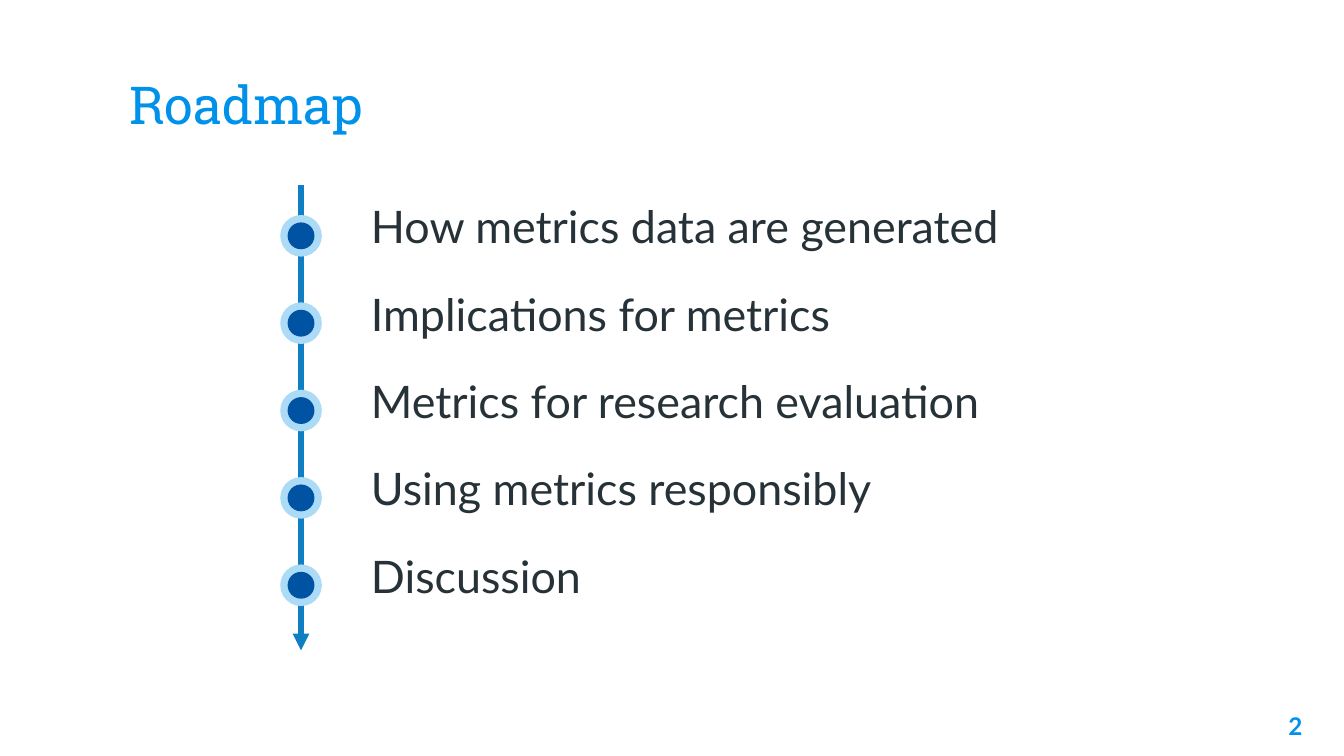
from lxml import etree
from pptx import Presentation
from pptx import util as u
from pptx.dml.color import RGBColor
from pptx.enum import shapes, text
from pptx.oxml import ns

PX = 4572
INK = {"sky": "0091EA", "dark": "263238", "line": "107EC2", "ring": "ACDBF8", "dot": "0053A3"}
STEPS = [
    "How metrics data are generated",
    "Implications for metrics",
    "Metrics for research evaluation",
    "Using metrics responsibly",
    "Discussion",
]


def tag(node, name, **attrs):
    """Append an empty drawing element to a node."""
    return etree.SubElement(node, ns.qn(name), **attrs)


def place(shape, box):
    """Move a shape to a box given in px."""
    shape.left, shape.top, shape.width, shape.height = (n * PX for n in box)


def setup(frame, anchor):
    """Give a text frame its wrapping, insets and anchor."""
    frame.word_wrap = True
    frame.auto_size = text.MSO_AUTO_SIZE.NONE
    frame.vertical_anchor = anchor
    frame.margin_left = frame.margin_right = 20 * PX
    frame.margin_top = frame.margin_bottom = 20 * PX


def style(para, face, size, ink, align=text.PP_ALIGN.LEFT, bold=False):
    """Format a paragraph and its runs."""
    para.alignment = align
    for run in para.runs:
        run.font.name, run.font.size, run.font.bold = face, u.Pt(size), bold
        run.font.color.rgb = RGBColor.from_string(INK[ink])


def title(slide, box):
    """Fill the title placeholder."""
    shape = slide.shapes.title
    place(shape, box)
    frame = shape.text_frame
    setup(frame, text.MSO_ANCHOR.BOTTOM)
    frame.text = "Roadmap"
    style(frame.paragraphs[0], "Roboto Slab", 28, "sky")


def agenda(slide, box):
    """List the steps in the body placeholder."""
    shape = slide.placeholders[1]
    place(shape, box)
    frame = shape.text_frame
    setup(frame, text.MSO_ANCHOR.TOP)
    frame.text = "\n".join(STEPS)
    for i, para in enumerate(frame.paragraphs):
        props = para._p.get_or_add_pPr()
        props.set("marL", str(16 * PX))
        props.set("indent", "0")
        tag(props, "a:buNone")
        para.space_before = u.Pt(6 if i else 0)
        para.space_after = u.Pt(12)
        style(para, "Lato", 24, "dark")


def number(slide, box):
    """Write the slide number in its corner."""
    shape = slide.shapes.add_textbox(0, 0, 0, 0)
    place(shape, box)
    frame = shape.text_frame
    setup(frame, text.MSO_ANCHOR.TOP)
    frame.text = "2"
    style(frame.paragraphs[0], "Lato", 13, "sky", text.PP_ALIGN.RIGHT, True)


def disc(group, x, y, size, ink):
    """Draw a plain circle centred on a point."""
    shape = group.shapes.add_shape(shapes.MSO_SHAPE.OVAL, 0, 0, 0, 0)
    place(shape, (x - size // 2, y - size // 2, size, size))
    shape.shadow.inherit = False
    shape.fill.solid()
    shape.fill.fore_color.rgb = RGBColor.from_string(INK[ink])
    shape.line.fill.background()


def track(slide, box):
    """Draw the downward arrow with one marker per step."""
    left, top, width, height = box
    mid = left + width // 2
    group = slide.shapes.add_group_shape()
    line = group.shapes.add_connector(
        shapes.MSO_CONNECTOR.STRAIGHT, mid * PX, top * PX, mid * PX, (top + height) * PX
    )
    line.line.color.rgb = RGBColor.from_string(INK["line"])
    line.line.width = u.Pt(3)
    tag(line.line._get_or_add_ln(), "a:tailEnd", type="triangle")
    tag(line._element.spPr, "a:effectLst")
    for i in range(len(STEPS)):
        y = top + 75 + 130 * i
        disc(group, mid, y, width, "ring")
        disc(group, mid, y, 40, "dot")


def main():
    """Build the roadmap slide."""
    deck = Presentation()
    deck.slide_width, deck.slide_height = 2000 * PX, 1125 * PX
    slide = deck.slides.add_slide(deck.slide_layouts[1])
    title(slide, (172, 68, 1656, 153))
    agenda(slide, (516, 276, 1158, 782))
    number(slide, (1838, 1039, 120, 86))
    track(slide, (417, 276, 62, 692))
    deck.save("out.pptx")


if __name__ == "__main__":
    main()
